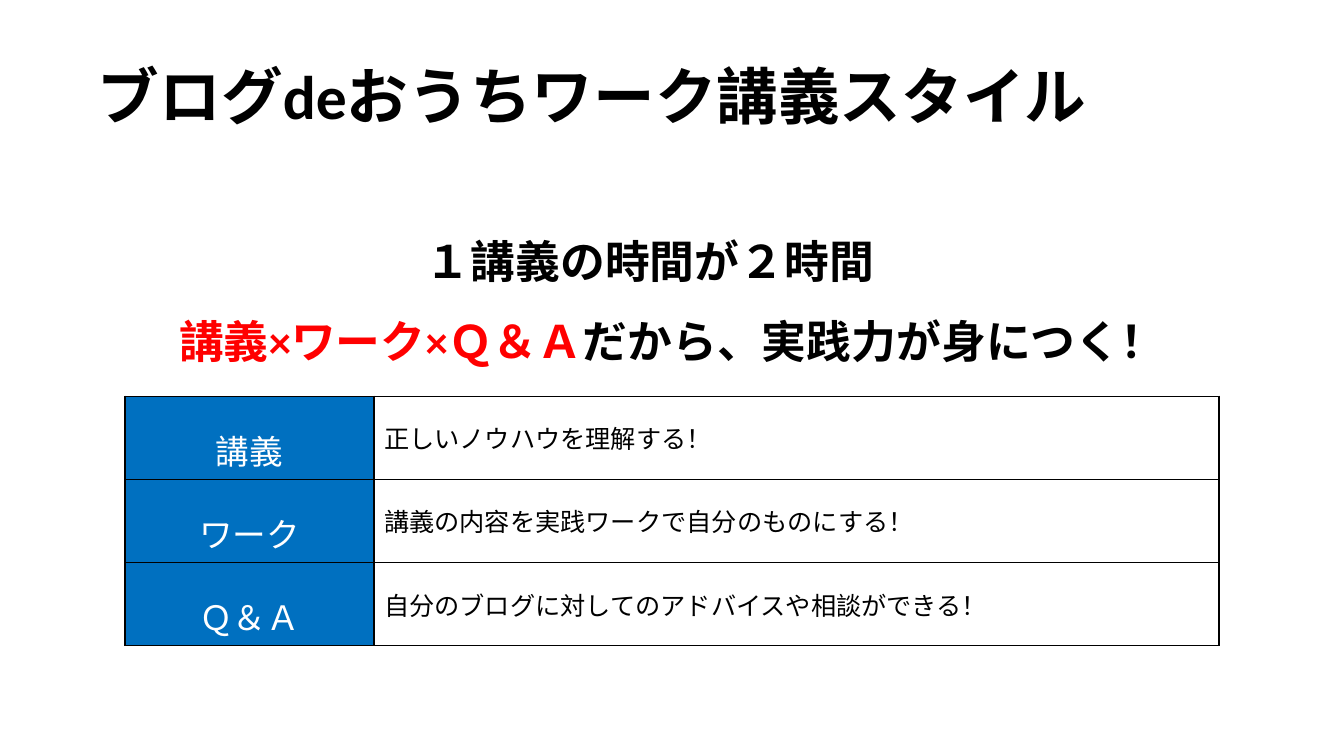
from lxml import etree
from pptx import Presentation
from pptx.dml.color import RGBColor
from pptx.enum import text as t
from pptx.oxml import ns
from pptx.util import Inches, Pt

BLACK = RGBColor(0, 0, 0)
WHITE = RGBColor(255, 255, 255)
RED = RGBColor(255, 0, 0)
BLUE = RGBColor(0x00, 0x70, 0xC0)
LEFT, CENTER = t.PP_ALIGN.LEFT, t.PP_ALIGN.CENTER

STEPS = [
    ("講義", "正しいノウハウを理解する！"),
    ("ワーク", "講義の内容を実践ワークで自分のものにする！"),
    ("Ｑ＆Ａ", "自分のブログに対してのアドバイスや相談ができる！"),
]


def assign(item, values):
    for name, value in values.items():
        setattr(item, name, value)


def add_run(para, words, size, color, bold=False):
    run = para.add_run()
    run.text = words
    assign(run.font, {"name": "Calibri", "size": Pt(size), "bold": bold})
    run.font.color.rgb = color


def set_para(para, align, spacing):
    assign(para, {"alignment": align, "line_spacing": spacing, "space_before": Pt(0)})


def set_holder(holder, box, anchor):
    """Place a placeholder and return its first paragraph."""
    sides = ("left", "top", "width", "height")
    assign(holder, {side: Inches(size) for side, size in zip(sides, box)})
    frame = holder.text_frame
    assign(frame, {"word_wrap": True, "auto_size": t.MSO_AUTO_SIZE.NONE,
                   "vertical_anchor": anchor})
    margins = ("margin_left", "margin_top", "margin_right", "margin_bottom")
    assign(frame, dict.fromkeys(margins, Inches(0.05)))
    return frame.paragraphs[0]


def add_title(slide):
    para = set_holder(slide.shapes.title, (0.92, 0.4, 11.5, 1.17), t.MSO_ANCHOR.MIDDLE)
    set_para(para, LEFT, 0.9)
    add_run(para, "ブログdeおうちワーク講義スタイル", 44, BLACK, True)


def add_lead(slide):
    para = set_holder(slide.placeholders[1], (0.92, 2, 11.5, 4.83), t.MSO_ANCHOR.TOP)
    set_para(para, CENTER, 1.5)
    props = para._p.get_or_add_pPr()
    props.set("marL", "0")
    props.set("indent", "0")
    etree.SubElement(props, ns.qn("a:buNone"))
    add_run(para, "１講義の時間が２時間　", 32, BLACK, True)
    para.add_line_break()
    add_run(para, "講義×ワーク×Ｑ＆Ａ", 32, RED, True)
    add_run(para, "だから、実践力が身につく！", 32, BLACK, True)


def add_border(cell):
    props = cell._tc.get_or_add_tcPr()
    for side in ("lnL", "lnR", "lnT", "lnB"):
        line = etree.SubElement(props, ns.qn(f"a:{side}"), w=str(Pt(1)))
        fill = etree.SubElement(line, ns.qn("a:solidFill"))
        etree.SubElement(fill, ns.qn("a:srgbClr"), val=str(BLACK))


def fill_cell(cell, words, size, color, align, back=None):
    add_border(cell)
    if back is None:
        cell.fill.background()
    else:
        cell.fill.solid()
        cell.fill.fore_color.rgb = back
    para = cell.text_frame.paragraphs[0]
    set_para(para, align, 1.5)
    add_run(para, words, size, color)


def add_steps(slide):
    frame = slide.shapes.add_table(len(STEPS), 2, Inches(1.24), Inches(3.93),
                                   Inches(10.85), Inches(2.37))
    table = frame.table
    assign(table, {"first_row": False, "horz_banding": False})
    for col, width in zip(table.columns, (2.47, 8.38)):
        col.width = Inches(width)
    for row, (name, gain) in zip(table.rows, STEPS):
        row.height = Inches(0.79)
        fill_cell(row.cells[0], name, 24, WHITE, CENTER, BLUE)
        fill_cell(row.cells[1], gain, 18, BLACK, LEFT)


def main():
    deck = Presentation()
    assign(deck, {"slide_width": Inches(13.33), "slide_height": Inches(7.5)})
    slide = deck.slides.add_slide(deck.slide_layouts[1])
    add_title(slide)
    add_lead(slide)
    add_steps(slide)
    deck.save("out.pptx")


if __name__ == "__main__":
    main()
